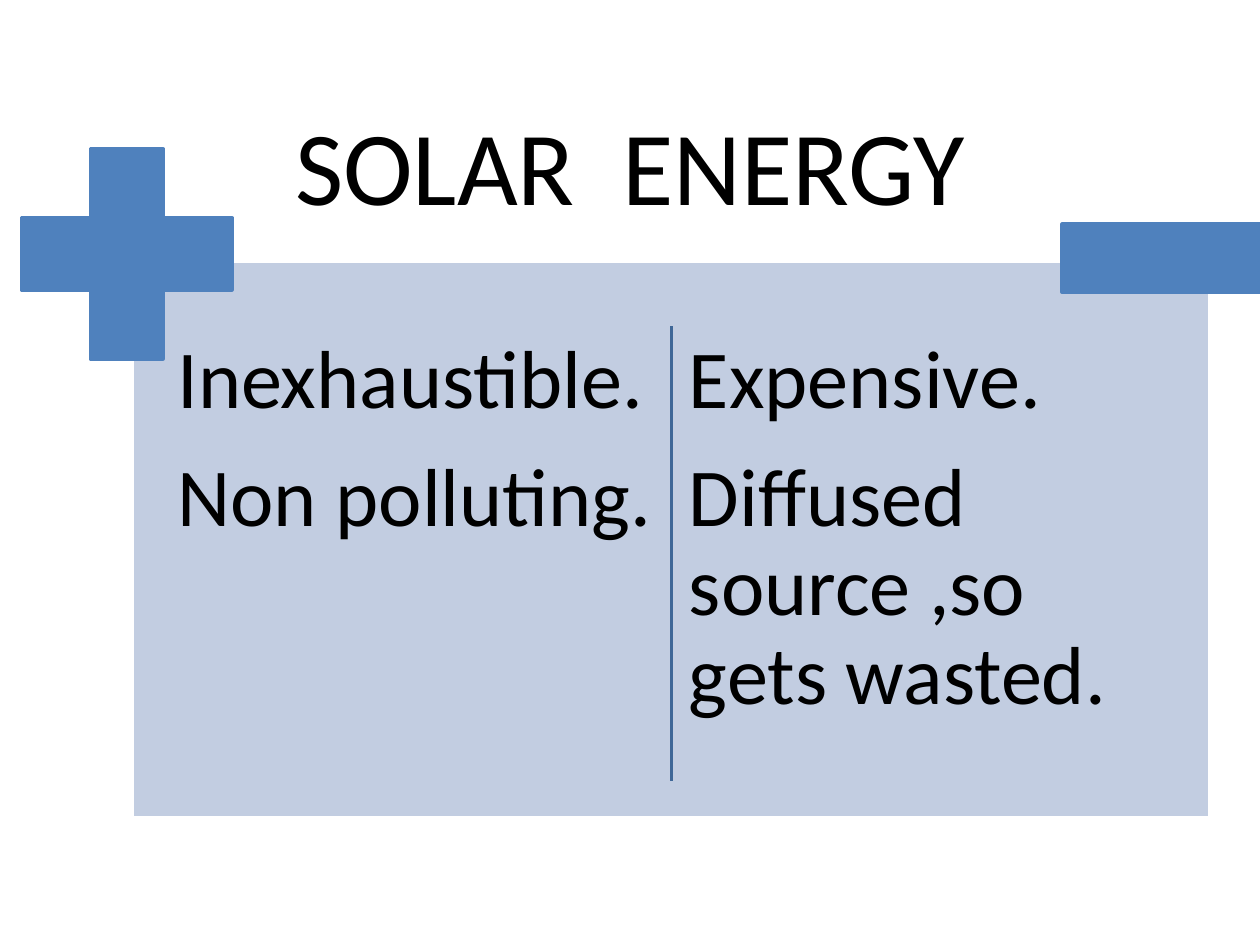
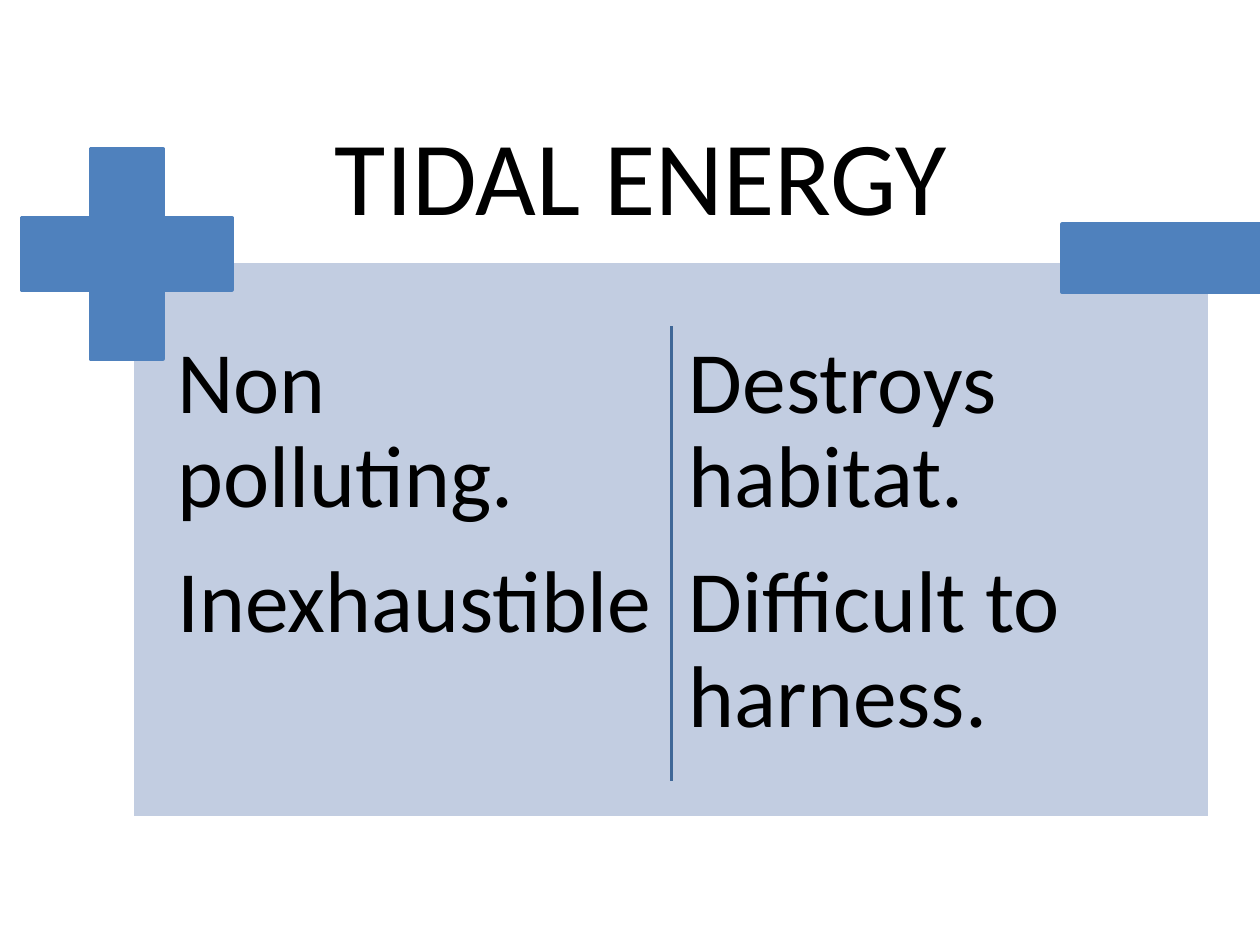
from dataclasses import dataclass

from lxml.etree import SubElement
from pptx import Presentation
from pptx.dml.color import RGBColor
from pptx.enum.shapes import MSO_CONNECTOR, MSO_SHAPE
from pptx.enum.text import MSO_AUTO_SIZE, PP_ALIGN
from pptx.oxml.ns import qn
from pptx.util import Inches, Pt

SLIDE_WIDTH, SLIDE_HEIGHT = Inches(10), Inches(7.5)
GRID_COLUMNS, GRID_ROWS = 10, 7.5


@dataclass(frozen=True)
class Theme:
    font: str = "Calibri"
    title_size: int = 60
    text: RGBColor = RGBColor(0, 0, 0)
    panel: RGBColor = RGBColor(0xC2, 0xCD, 0xE1)
    panel_edge: RGBColor = RGBColor(0xFF, 0xFF, 0xFF)
    sign: RGBColor = RGBColor(0x4F, 0x81, 0xBD)
    divider: RGBColor = RGBColor(0x3F, 0x67, 0x97)
    line_width: int = 2
    line_spacing: float = 0.9
    space_after: float = 0.35  # share of the type size


THEME = Theme()

PANEL = (1.05, 2.07, 8.55, 4.42)
PLUS_SIGN = (0.17, 1.18, 1.67, 1.67)
PLUS_ARM = 0.328
MINUS_SIGN = (8.43, 1.78, 1.57, 0.54)
DIVIDER = (5.33, 2.59, 5.33, 6.2)
ADVANTAGES = (1.31, 2.58, 3.97, 3.78)
DRAWBACKS = (5.37, 2.58, 3.97, 3.78)
LIST_INSET = 0.1


def on_grid(columns_and_rows):
    """Turn alternating columns and rows into lengths on the slide."""
    units = (SLIDE_WIDTH / GRID_COLUMNS, SLIDE_HEIGHT / GRID_ROWS) * 2
    return [round(count * unit) for count, unit in zip(columns_and_rows, units)]


def add_block(shapes, preset, area, fill, edge):
    shape = shapes.add_shape(preset, *on_grid(area))
    shape.shadow.inherit = False
    shape.fill.solid()
    shape.fill.fore_color.rgb = fill
    shape.line.color.rgb = edge
    shape.line.width = Pt(THEME.line_width)
    return shape


def add_divider(shapes):
    connector = shapes.add_connector(MSO_CONNECTOR.STRAIGHT, *on_grid(DIVIDER))
    connector.line.color.rgb = THEME.divider
    connector.line.width = Pt(THEME.line_width)
    SubElement(connector.element.spPr, qn("a:effectLst"))


def add_text_frame(shapes, area):
    frame = shapes.add_textbox(*on_grid(area)).text_frame
    frame.word_wrap = True
    return frame


def add_run(paragraph, text, size):
    run = paragraph.add_run()
    run.text = text
    run.font.name = THEME.font
    run.font.size = Pt(size)
    run.font.color.rgb = THEME.text


def add_title(shapes, text, area):
    frame = add_text_frame(shapes, area)
    frame.auto_size = MSO_AUTO_SIZE.SHAPE_TO_FIT_TEXT
    paragraph = frame.paragraphs[0]
    paragraph.alignment = PP_ALIGN.CENTER
    add_run(paragraph, text, THEME.title_size)


def add_list(shapes, area, items, size):
    frame = add_text_frame(shapes, area)
    frame.margin_left = frame.margin_right = Inches(LIST_INSET)
    frame.margin_top = frame.margin_bottom = Inches(LIST_INSET)
    for index, item in enumerate(items):
        paragraph = frame.add_paragraph() if index else frame.paragraphs[0]
        paragraph.line_spacing = THEME.line_spacing
        paragraph.space_after = Pt(size * THEME.space_after)
        add_run(paragraph, item, size)


def add_comparison_slide(presentation, title, title_area, advantages, drawbacks, size):
    """Add a slide that sets advantages beside drawbacks on a panel."""
    slide = presentation.slides.add_slide(presentation.slide_layouts[6])
    shapes = slide.shapes.add_group_shape().shapes
    add_block(shapes, MSO_SHAPE.RECTANGLE, PANEL, THEME.panel, THEME.panel_edge)
    add_list(shapes, ADVANTAGES, advantages, size)
    add_list(shapes, DRAWBACKS, drawbacks, size)
    plus = add_block(shapes, MSO_SHAPE.CROSS, PLUS_SIGN, THEME.sign, THEME.sign)
    plus.adjustments[0] = PLUS_ARM
    add_block(shapes, MSO_SHAPE.RECTANGLE, MINUS_SIGN, THEME.sign, THEME.sign)
    add_divider(shapes)
    add_title(slide.shapes, title, title_area)


def main():
    presentation = Presentation()
    presentation.slide_width = SLIDE_WIDTH
    presentation.slide_height = SLIDE_HEIGHT
    add_comparison_slide(
        presentation,
        title="SOLAR  ENERGY",
        title_area=(1.5, 0.75, 7, 1.11),
        advantages=["Inexhaustible.", "Non polluting."],
        drawbacks=["Expensive.", "Diffused source ,so gets wasted."],
        size=47,
    )
    add_comparison_slide(
        presentation,
        title="TIDAL ENERGY",
        title_area=(1.67, 0.83, 6.83, 1.11),
        advantages=["Non polluting.", "Inexhaustible"],
        drawbacks=["Destroys habitat.", "Difficult to harness."],
        size=50,
    )
    presentation.save("out.pptx")


if __name__ == "__main__":
    main()
